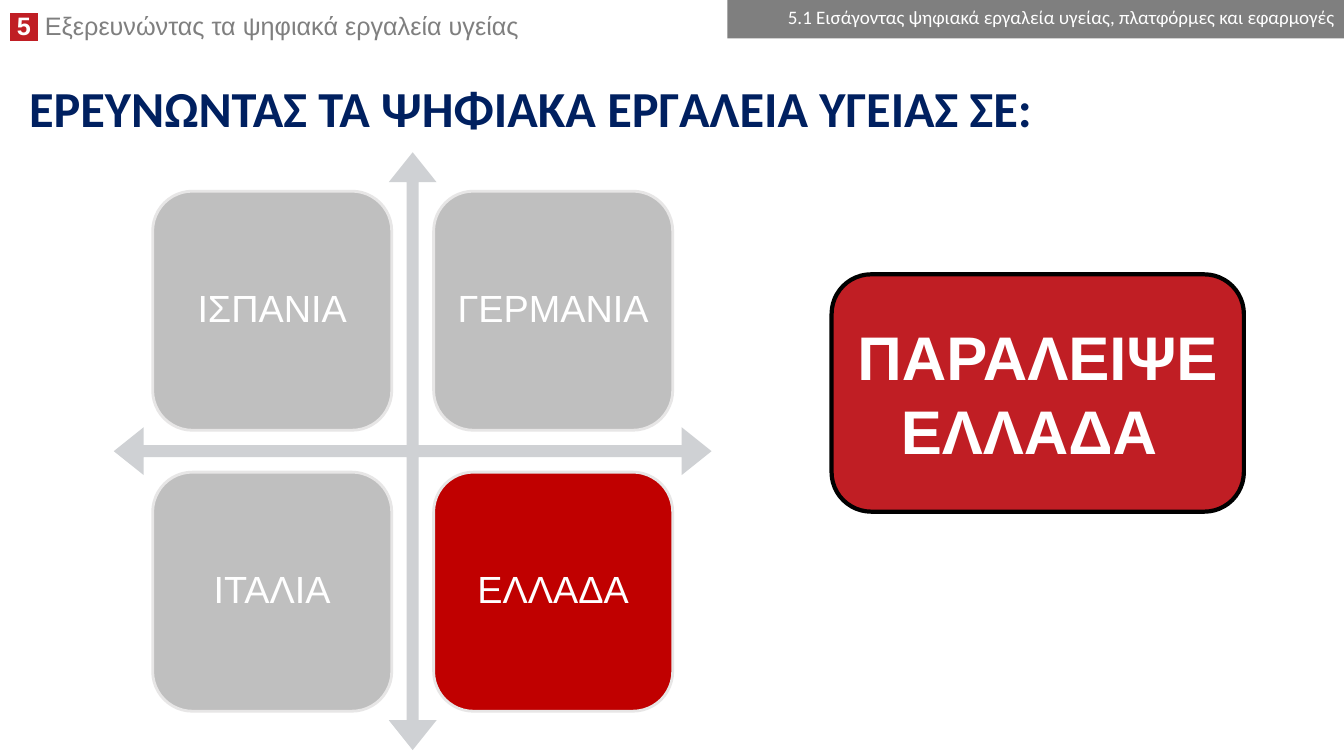
import pptx
import pptx.util
import pptx.dml.color
import pptx.enum.shapes
import pptx.enum.text
import pptx.oxml
import pptx.oxml.ns

Pt = pptx.util.Pt
SHAPE = pptx.enum.shapes.MSO_SHAPE
ALIGN = pptx.enum.text.PP_ALIGN
ANCHOR = pptx.enum.text.MSO_ANCHOR

COLORS = {
    "white": "FFFFFF", "black": "000000", "navy": "002060", "red": "C01E24",
    "tile": "BFBFBF", "active": "C00000", "outline": "E7E6E6",
    "arrow": "CFD1D4", "grey": "7F7F7F",
}
COUNTRIES = [["ΙΣΠΑΝΙΑ", "ΓΕΡΜΑΝΙΑ"], ["ΙΤΑΛΙΑ", "ΕΛΛΑΔΑ"]]


def rgb(name):
    return pptx.dml.color.RGBColor.from_string(COLORS[name])


def add_run(p, text, color, **fmt):
    r = p.add_run()
    r.text = text
    for key, value in fmt.items():
        setattr(r.font, key, value)
    r.font.color.rgb = rgb(color)
    return r


def highlight(r, color):
    mark = pptx.oxml.parse_xml(
        f'<a:highlight {pptx.oxml.ns.nsdecls("a")}>'
        f'<a:srgbClr val="{COLORS[color]}"/></a:highlight>')
    rPr = r._r.get_or_add_rPr()
    rPr.find(pptx.oxml.ns.qn("a:solidFill")).addnext(mark)


def set_frame(sp, anchor, align, spacing, lines=1):
    """Set wrapping and paragraph format, and return the paragraphs."""
    tf = sp.text_frame
    tf.word_wrap = True
    tf.vertical_anchor = anchor
    for _ in range(lines - 1):
        tf.add_paragraph()
    for p in tf.paragraphs:
        p.alignment = align
        p.line_spacing = spacing
    return tf.paragraphs


def add_box(s, kind, box, fill, line=None, width=0):
    sp = s.shapes.add_shape(kind, *(Pt(v) for v in box))
    sp.shadow.inherit = False
    sp.fill.solid()
    sp.fill.fore_color.rgb = rgb(fill)
    if line:
        sp.line.color.rgb = rgb(line)
        sp.line.width = Pt(width)
    else:
        sp.line.fill.background()
    return sp


def add_text(s, box, anchor, spacing):
    sp = s.shapes.add_textbox(*(Pt(v) for v in box))
    return set_frame(sp, anchor, ALIGN.LEFT, spacing)[0]


def add_chapter(s, box):
    p = add_text(s, box, ANCHOR.TOP, 0.8)
    fmt = {"size": Pt(18), "name": "Arial"}
    highlight(add_run(p, " 5 ", "white", bold=True, **fmt), "red")
    add_run(p, " Εξερευνώντας τα ψηφιακά εργαλεία υγείας", "grey", **fmt)


def add_title(s, box):
    p = add_text(s, box, ANCHOR.MIDDLE, 0.9)
    add_run(p, "ΕΡΕΥΝΩΝΤΑΣ ΤΑ ΨΗΦΙΑΚΑ ΕΡΓΑΛΕΙΑ ΥΓΕΙΑΣ ΣΕ:", "navy",
            size=Pt(36), name="Calibri", bold=True)


def add_section_bar(s, box):
    sp = add_box(s, SHAPE.RECTANGLE, box, "grey")
    p = set_frame(sp, ANCHOR.MIDDLE, ALIGN.RIGHT, 0.7)[0]
    add_run(p, "5.1 Εισάγοντας ψηφιακά εργαλεία υγείας, πλατφόρμες και εφαρμογές",
            "white", size=Pt(13.6), name="Calibri")


def add_matrix(s, left, top, side):
    """Draw the four-way arrow with a country tile in each quadrant."""
    arrow = add_box(s, SHAPE.QUAD_ARROW, (left, top, side, side), "arrow")
    for i, value in enumerate((0.02, 0.04, 0.05)):
        arrow.adjustments[i] = value
    tile, margin, step = 0.4 * side, 0.065 * side, 0.47 * side
    for row, names in enumerate(COUNTRIES):
        for col, name in enumerate(names):
            box = (left + margin + col * step, top + margin + row * step, tile, tile)
            fill = "active" if name == "ΕΛΛΑΔΑ" else "tile"
            sp = add_box(s, SHAPE.ROUNDED_RECTANGLE, box, fill, "outline", 2)
            sp.text_frame.margin_left = sp.text_frame.margin_right = 0
            p = set_frame(sp, ANCHOR.MIDDLE, ALIGN.CENTER, 0.9)[0]
            add_run(p, name, "white", size=Pt(27), name="Arial")


def add_skip_button(s, box):
    sp = add_box(s, SHAPE.ROUNDED_RECTANGLE, box, "red", "black", 3)
    lines = ["ΠΑΡΑΛΕΙΨΕ ", "ΕΛΛΑΔΑ "]
    paragraphs = set_frame(sp, ANCHOR.MIDDLE, ALIGN.CENTER, 1.0, len(lines))
    for p, text in zip(paragraphs, lines):
        add_run(p, text, "white", size=Pt(44), name="Arial", bold=True)


def main():
    prs = pptx.Presentation()
    prs.slide_width, prs.slide_height = Pt(960), Pt(540)
    s = prs.slides.add_slide(prs.slide_layouts[6])
    add_chapter(s, (0, 8, 685.5, 25))
    add_title(s, (13.7, 56, 871, 47.5))
    add_matrix(s, 81.3, 108.8, 427)
    add_section_bar(s, (519.6, 0, 440.4, 27.4))
    add_skip_button(s, (594, 196, 294.5, 169.5))
    prs.save("out.pptx")


if __name__ == "__main__":
    main()
